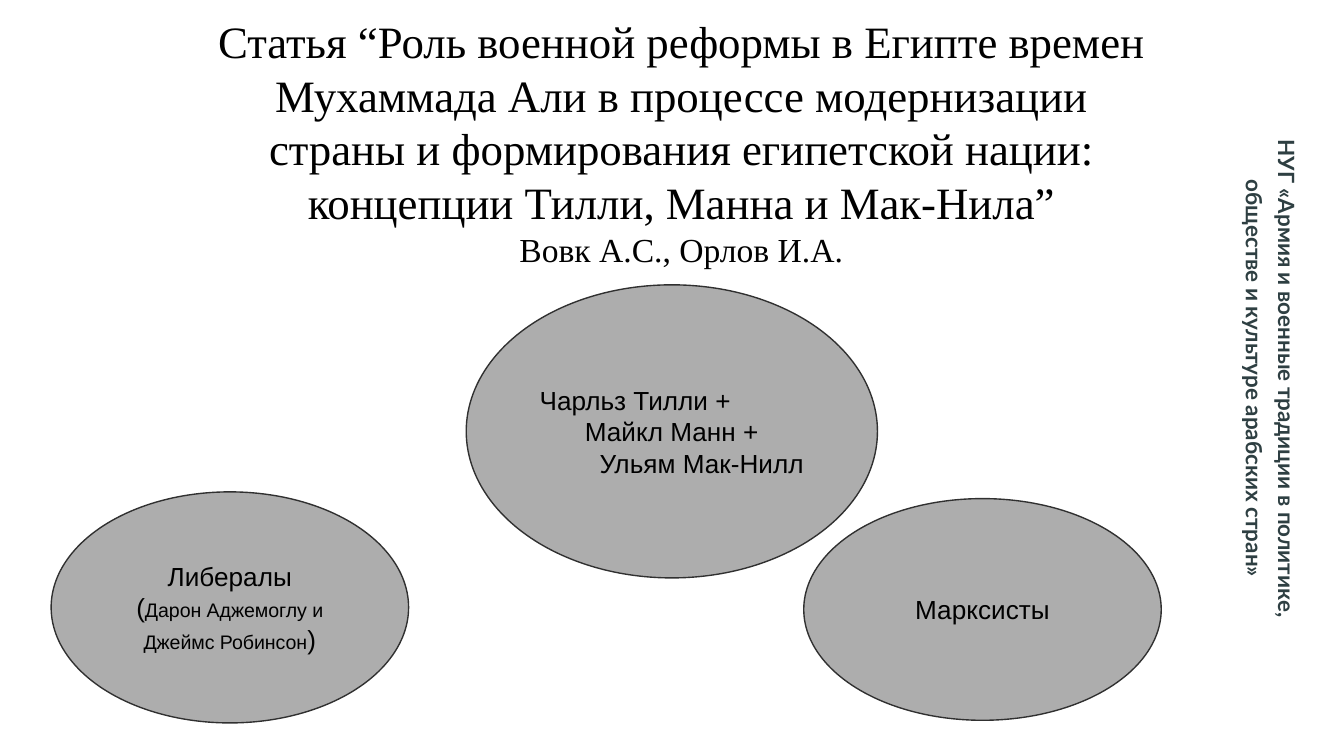
from pptx import Presentation
from pptx.dml.color import RGBColor
from pptx.enum import shapes, text
from pptx.util import Pt

BLACK = RGBColor(0x00, 0x00, 0x00)
SLATE = RGBColor(0x2E, 0x3F, 0x42)
GREY = RGBColor(0xAD, 0xAD, 0xAD)
EDGE = RGBColor(0x30, 0x30, 0x30)
LEFT, MID, RIGHT = text.PP_ALIGN.LEFT, text.PP_ALIGN.CENTER, text.PP_ALIGN.RIGHT


def write(shape, paras, font="Arial", color=BLACK, bold=False, space=1.0,
          anchor=text.MSO_ANCHOR.TOP):
    """Fill a shape with paragraphs, each an alignment and (text, size) runs."""
    frame = shape.text_frame
    frame.word_wrap = True
    frame.auto_size = text.MSO_AUTO_SIZE.NONE
    frame.vertical_anchor = anchor
    frame.margin_left = frame.margin_right = Pt(7.2)
    frame.margin_top = frame.margin_bottom = Pt(7.2)
    for i, (align, runs) in enumerate(paras):
        para = frame.add_paragraph() if i else frame.paragraphs[0]
        para.alignment = align
        para.line_spacing = space
        para.space_before = para.space_after = Pt(0)
        for words, size in runs:
            run = para.add_run()
            run.text = words
            run.font.name = font
            run.font.size = Pt(size)
            run.font.bold = bold
            run.font.color.rgb = color


def head(slide, x, y, w, h):
    """Place the article title and its authors."""
    title = slide.shapes.title
    title.left, title.top, title.width, title.height = Pt(x), Pt(y), Pt(w), Pt(h)
    write(title, [
        (MID, [("Статья “Роль военной реформы в Египте времен Мухаммада Али "
                "в процессе модернизации страны и формирования египетской "
                "нации: концепции Тилли, Манна и Мак-Нила”", 24)]),
        (MID, [("Вовк А.С., Орлов И.А.", 18)]),
    ], font="Times New Roman")


def side(slide, x, y, w, h):
    """Place the group name, turned to run down the given box."""
    box = slide.shapes.add_textbox(
        Pt(x + (w - h) / 2), Pt(y + (h - w) / 2), Pt(h), Pt(w))
    box.rotation = 90
    write(box, [(MID, [("НУГ «Армия и военные традиции в политике, обществе "
                        "и культуре арабских стран»", 12)])],
          font="Lato", color=SLATE, bold=True, space=1.2)


def school(slide, x, y, w, h, paras):
    """Draw one school of thought as a labelled ellipse."""
    oval = slide.shapes.add_shape(
        shapes.MSO_SHAPE.OVAL, Pt(x), Pt(y), Pt(w), Pt(h))
    oval.shadow.inherit = False
    oval.fill.solid()
    oval.fill.fore_color.rgb = GREY
    oval.line.color.rgb = EDGE
    oval.line.width = Pt(0.75)
    write(oval, paras, anchor=text.MSO_ANCHOR.MIDDLE)


def main():
    """Build and save the slide."""
    deck = Presentation()
    deck.slide_width, deck.slide_height = Pt(720), Pt(405)
    slide = deck.slides.add_slide(deck.slide_layouts.get_by_name("Title Only"))
    side(slide, 635.4, 47.2, 71.3, 311)
    head(slide, 105.1, 0, 519.8, 152.6)
    school(slide, 249.8, 152.6, 220.3, 157, [
        (LEFT, [("Чарльз Тилли +", 14)]),
        (MID, [("Майкл Манн +", 14)]),
        (RIGHT, [("Ульям Мак-Нилл", 14)]),
    ])
    school(slide, 27.4, 263.5, 191.5, 123.8, [
        (MID, [("Либералы", 14)]),
        (MID, [("(", 14), ("Дарон Аджемоглу и Джеймс Робинсон", 10.5), (")", 14)]),
    ])
    school(slide, 430.6, 267.1, 191.5, 118.8, [(MID, [("Марксисты", 14)])])
    deck.save("out.pptx")


if __name__ == "__main__":
    main()
